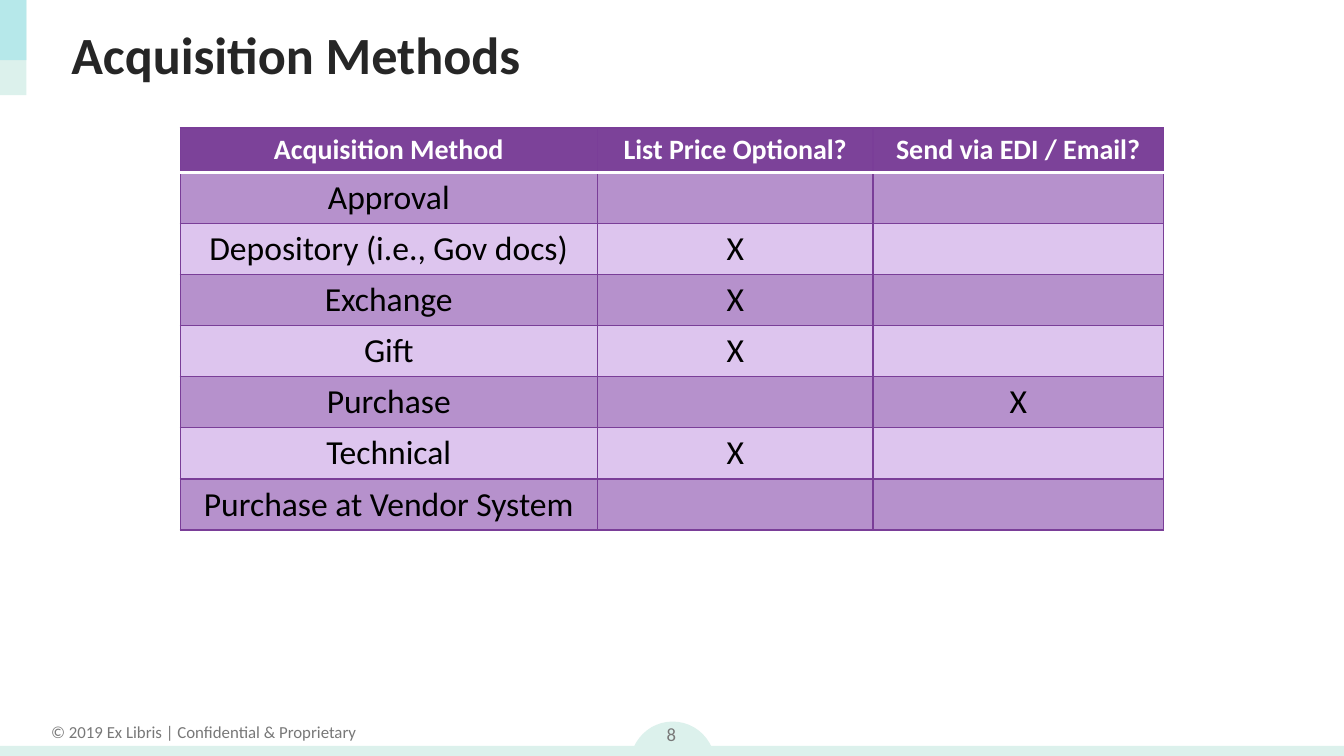
import pptx
import pptx.dml.color
import pptx.enum.shapes
import pptx.enum.text
import pptx.oxml
import pptx.oxml.ns
import pptx.util

Pt = pptx.util.Pt
RGBColor = pptx.dml.color.RGBColor
MSO_SHAPE = pptx.enum.shapes.MSO_SHAPE
PP_ALIGN = pptx.enum.text.PP_ALIGN
MSO_ANCHOR = pptx.enum.text.MSO_ANCHOR

COLORS = {
    "mint": "DCF1EC", "aqua": "B6E8EA", "gray": "787878", "title": "262626",
    "header": "7C4299", "dark_band": "B691CC", "light_band": "DDC5EE",
    "border": "7A3E98", "white": "FFFFFF", "black": "000000",
}


def format_paragraph(paragraph, size, color, bold=False, alignment=PP_ALIGN.CENTER):
    paragraph.alignment = alignment
    paragraph.font.name = "Calibri"
    paragraph.font.size = Pt(size)
    paragraph.font.bold = bold
    paragraph.font.color.rgb = RGBColor.from_string(COLORS[color])


def add_border(cell, side, color, width):
    cell._tc.get_or_add_tcPr().append(pptx.oxml.parse_xml(
        f'<a:{side} {pptx.oxml.ns.nsdecls("a")} w="{Pt(width)}">'
        f'<a:solidFill><a:srgbClr val="{COLORS[color]}"/></a:solidFill></a:{side}>'))


presentation = pptx.Presentation()
presentation.slide_width = Pt(720)
presentation.slide_height = Pt(405)
slide = presentation.slides.add_slide(presentation.slide_layouts[5])

decorations = [
    (MSO_SHAPE.OVAL, 337.7, 386.6, 45.4, 45.4, "mint"),
    (MSO_SHAPE.RECTANGLE, 0, 399.6, 720, 7.9, "mint"),
    (MSO_SHAPE.RECTANGLE, 0, 0, 14.2, 51, "mint"),
    (MSO_SHAPE.RECTANGLE, 0, 0, 14.2, 32.3, "aqua"),
]
for kind, left, top, width, height, color in decorations:
    shape = slide.shapes.add_shape(kind, Pt(left), Pt(top), Pt(width), Pt(height))
    shape.shadow.inherit = False
    shape.fill.solid()
    shape.fill.fore_color.rgb = RGBColor.from_string(COLORS[color])
    shape.line.fill.background()

footers = [
    ("© 2019 Ex Libris | Confidential & Proprietary", 19.4, 383, 179.3, 18, 9, False),
    ("8", 338.4, 378.9, 42.5, 28.8, 10, True),
]
for text, left, top, width, height, size, wrap in footers:
    text_box = slide.shapes.add_textbox(Pt(left), Pt(top), Pt(width), Pt(height))
    text_box.text_frame.word_wrap = wrap
    text_box.text_frame.vertical_anchor = MSO_ANCHOR.MIDDLE
    text_box.text_frame.text = text
    format_paragraph(text_box.text_frame.paragraphs[0], size, "gray")

title = slide.shapes.title
title.left, title.top, title.width, title.height = Pt(31), Pt(5.8), Pt(663), Pt(45.4)
title.text_frame.text = "Acquisition Methods"
title.text_frame.vertical_anchor = MSO_ANCHOR.MIDDLE
format_paragraph(title.text_frame.paragraphs[0], 28, "title", True, PP_ALIGN.LEFT)

rows = [
    ("Acquisition Method", "List Price Optional?", "Send via EDI / Email?"),
    ("Approval", "", ""),
    ("Depository (i.e., Gov docs)", "X", ""),
    ("Exchange", "X", ""),
    ("Gift", "X", ""),
    ("Purchase", "", "X"),
    ("Technical", "X", ""),
    ("Purchase at Vendor System", "", ""),
]
column_widths = [223.6, 147.6, 155.6]
header_height, row_height = 23.7, 27.4
table = slide.shapes.add_table(
    len(rows), len(column_widths), Pt(96.5), Pt(68.6), Pt(sum(column_widths)),
    Pt(header_height + row_height * (len(rows) - 1))).table
for column, width in zip(table.columns, column_widths):
    column.width = Pt(width)

for row_index, row in enumerate(rows):
    is_header = row_index == 0
    table.rows[row_index].height = Pt(header_height if is_header else row_height)
    if is_header:
        fill = "header"
    else:
        fill = "dark_band" if row_index % 2 else "light_band"
    for column_index, text in enumerate(row):
        cell = table.cell(row_index, column_index)
        cell.text = text
        cell.margin_left = cell.margin_right = Pt(6.5)
        cell.margin_top = cell.margin_bottom = Pt(2.7)
        cell.vertical_anchor = MSO_ANCHOR.TOP if is_header else MSO_ANCHOR.MIDDLE
        format_paragraph(cell.text_frame.paragraphs[0], 15 if is_header else 18,
                         "white" if is_header else "black", is_header)
        borders = {side: ("border", 0.75) for side in ("lnL", "lnR", "lnT", "lnB")}
        if row_index < 2:
            borders["lnB" if is_header else "lnT"] = ("white", 2)
        for side, (color, width) in borders.items():
            add_border(cell, side, color, width)
        cell.fill.solid()
        cell.fill.fore_color.rgb = RGBColor.from_string(COLORS[fill])

presentation.save("out.pptx")
